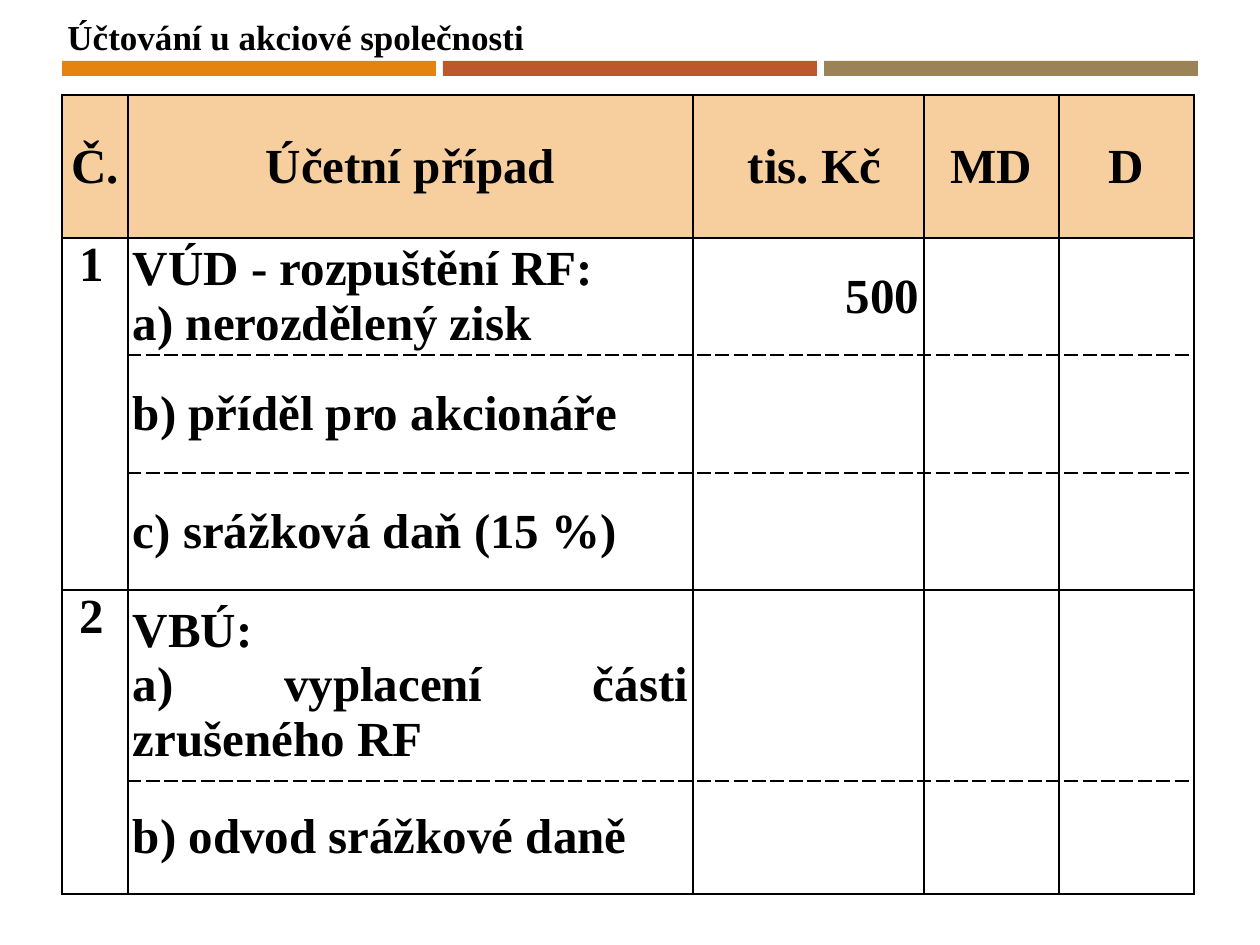
from lxml.etree import SubElement
from pptx import Presentation
from pptx.dml.color import RGBColor
from pptx.enum.shapes import MSO_SHAPE as Shape
from pptx.enum.text import MSO_ANCHOR as Anchor, PP_ALIGN as Align
from pptx.oxml.ns import qn
from pptx.util import Emu, Pt

EMU_PER_PX = 914400 / 126
FONT = "Times New Roman"
BLACK = RGBColor(0x00, 0x00, 0x00)
ORANGE = RGBColor(0xE4, 0x83, 0x12)
RUST = RGBColor(0xBD, 0x58, 0x2C)
KHAKI = RGBColor(0x9B, 0x83, 0x57)
PEACH = RGBColor(0xF7, 0xCE, 0x9D)

COLUMN_WIDTHS = [66, 565, 231, 135, 135]
ROW_HEIGHTS = [143, 117, 118, 117, 191, 113]
HEADERS = ["Č.", "Účetní případ", " tis. Kč", "MD", "D"]
# Each entry: number and its sub-rows of (lines of the case, amount)
ENTRIES = [
    (" 1", [
        (["VÚD - rozpuštění RF:", "a) nerozdělený zisk"], "500"),
        (["b) příděl pro akcionáře"], ""),
        (["c) srážková daň (15 %)"], ""),
    ]),
    (" 2", [
        (["VBÚ:", "a) vyplacení části zrušeného RF"], ""),
        (["b) odvod srážkové daně"], ""),
    ]),
]


def px(length):
    return Emu(round(length * EMU_PER_PX))


def write_lines(frame, lines, size, align=Align.LEFT):
    for index, line in enumerate(lines):
        paragraph = frame.paragraphs[0] if index == 0 else frame.add_paragraph()
        paragraph.alignment = align
        run = paragraph.add_run()
        run.text = line
        run.font.name = FONT
        run.font.size = Pt(size)
        run.font.bold = True
        run.font.color.rgb = BLACK


def add_bar(slide, left, color):
    bar = slide.shapes.add_shape(Shape.RECTANGLE, px(left), px(61), px(374), px(15))
    bar.shadow.inherit = False
    bar.fill.solid()
    bar.fill.fore_color.rgb = color
    bar.line.fill.background()


def add_title(slide, text):
    box = slide.shapes.add_textbox(px(55), px(9), px(485), px(55))
    box.text_frame.word_wrap = False
    write_lines(box.text_frame, [text], 20)


def set_borders(cell, dashed_sides):
    properties = cell._tc.get_or_add_tcPr()
    for index, side in enumerate("LRTB"):
        line = SubElement(properties, qn(f"a:ln{side}"), w=str(Pt(1)))
        fill = SubElement(line, qn("a:solidFill"))
        SubElement(fill, qn("a:srgbClr"), val=str(BLACK))
        dash = "dash" if side in dashed_sides else "solid"
        SubElement(line, qn("a:prstDash"), val=dash)
        properties.insert(index, line)


def fill_cell(cell, lines, align=Align.LEFT, anchor=Anchor.MIDDLE, color=None, dashed_sides=""):
    cell.margin_left = cell.margin_right = px(5)
    cell.margin_top = cell.margin_bottom = 0
    cell.vertical_anchor = anchor
    if color is None:
        cell.fill.background()
    else:
        cell.fill.solid()
        cell.fill.fore_color.rgb = color
    write_lines(cell.text_frame, [line for line in lines if line], 28, align)
    set_borders(cell, dashed_sides)


def add_entry(table, first_row, number, sub_rows):
    last_row = first_row + len(sub_rows) - 1
    for row, (case, amount) in enumerate(sub_rows, first_row):
        # Dashes only between the sub-rows of one entry
        dashed = ("T" if row > first_row else "") + ("B" if row < last_row else "")
        fill_cell(table.cell(row, 0), [number] if row == first_row else [], anchor=Anchor.TOP)
        fill_cell(table.cell(row, 1), case, Align.JUSTIFY, dashed_sides=dashed)
        fill_cell(table.cell(row, 2), [amount], Align.RIGHT, dashed_sides=dashed)
        for column in (3, 4):
            fill_cell(table.cell(row, column), [], dashed_sides=dashed)
    table.cell(first_row, 0).merge(table.cell(last_row, 0))


def add_ledger(slide):
    frame = slide.shapes.add_table(
        len(ROW_HEIGHTS), len(COLUMN_WIDTHS), px(62), px(95),
        px(sum(COLUMN_WIDTHS)), px(sum(ROW_HEIGHTS)))
    table = frame.table
    table.first_row = table.horz_banding = False
    for column, width in zip(table.columns, COLUMN_WIDTHS):
        column.width = px(width)
    for row, height in zip(table.rows, ROW_HEIGHTS):
        row.height = px(height)
    for column, header in enumerate(HEADERS):
        fill_cell(table.cell(0, column), [header], Align.CENTER, color=PEACH)
    first_row = 1
    for number, sub_rows in ENTRIES:
        add_entry(table, first_row, number, sub_rows)
        first_row += len(sub_rows)


def main():
    presentation = Presentation()
    presentation.slide_width, presentation.slide_height = px(1260), px(945)
    slide = presentation.slides.add_slide(presentation.slide_layouts[6])

    # Coloured bars under the title
    for index, color in enumerate([ORANGE, RUST, KHAKI]):
        add_bar(slide, 62 + index * 381, color)

    add_ledger(slide)
    add_title(slide, "Účtování u akciové společnosti")
    presentation.save("out.pptx")


if __name__ == "__main__":
    main()
